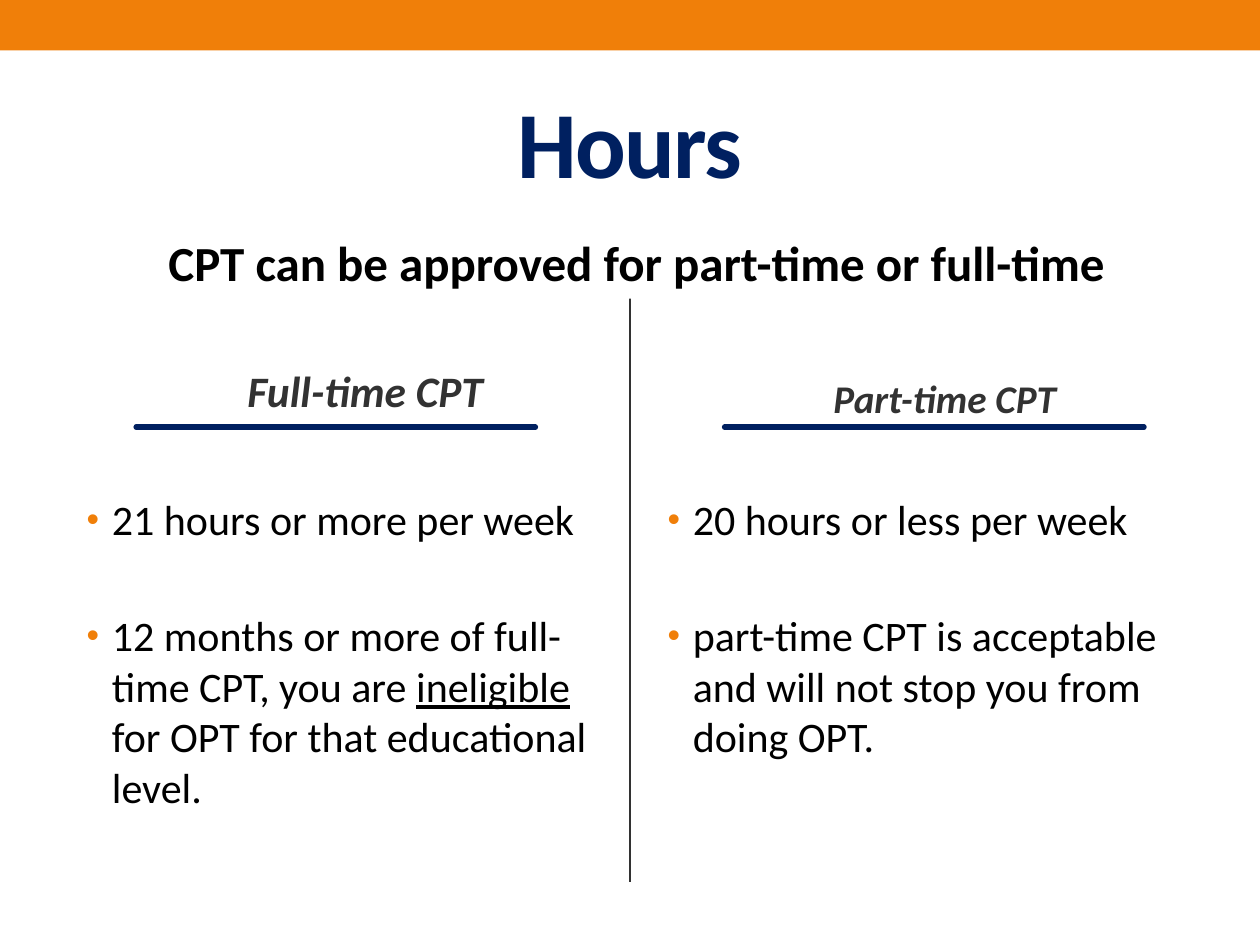
from dataclasses import dataclass

from pptx import Presentation
from pptx.dml.color import RGBColor
from pptx.enum.shapes import MSO_CONNECTOR, MSO_SHAPE
from pptx.enum.text import MSO_ANCHOR, PP_ALIGN
from pptx.oxml import parse_xml
from pptx.oxml.ns import nsdecls
from pptx.util import Inches, Pt

ORANGE = "F07F09"
NAVY = "002060"
GRAY = "323232"
BLACK = "000000"
WHITE = "FFFFFF"
FONT = "Calibri"
RULE_Y = 3.39


@dataclass(frozen=True)
class Frame:
    left: float
    top: float
    width: float
    height: float

    def lengths(self) -> list:
        return [Inches(n) for n in (self.left, self.top, self.width, self.height)]


@dataclass(frozen=True)
class Span:
    text: str
    underline: bool = False


@dataclass(frozen=True)
class Column:
    heading: str
    heading_size: float
    heading_frame: Frame
    rule_start: float
    rule_end: float
    body_frame: Frame
    bullets: tuple


COLUMNS = (
    Column(
        "Full-time CPT", 24.8, Frame(0.75, 2.69, 4.3, 0.7), 1.08, 4.25,
        Frame(0.59, RULE_Y, 4.3, 3.71),
        (
            (Span("21 hours or more per week"),),
            (
                Span("12 months or more of full-time CPT, you are "),
                Span("ineligible", True),
                Span(" for OPT for that educational level."),
            ),
        ),
    ),
    Column(
        "Part-time CPT", 22.4, Frame(5.35, 2.75, 4.3, 0.7), 5.75, 9.08,
        Frame(5.2, RULE_Y, 4.3, 3.53),
        (
            (Span("20 hours or less per week"),),
            (Span("part-time CPT is acceptable and will not stop you from doing OPT."),),
        ),
    ),
)


def color(value: str) -> RGBColor:
    return RGBColor.from_string(value)


def set_values(target, values: dict) -> None:
    for name, value in values.items():
        setattr(target, name, value)


def add_span(para, text: str, size: float, tone: str, **formats):
    span = para.add_run()
    span.text = text
    set_values(span.font, {"name": FONT, "size": Pt(size), **formats})
    span.font.color.rgb = color(tone)
    return span


def add_rectangle(page, frame: Frame, fill: str):
    box = page.shapes.add_shape(MSO_SHAPE.RECTANGLE, *frame.lengths())
    box.shadow.inherit = False
    box.fill.solid()
    box.fill.fore_color.rgb = color(fill)
    box.line.fill.background()
    return box


def add_text_box(page, frame: Frame, **formats):
    box = page.shapes.add_textbox(*frame.lengths())
    set_values(box.text_frame, {"word_wrap": True, **formats})
    return box.text_frame


def add_line(page, start: tuple, end: tuple, tone: str, width: float, cap: str = "flat") -> None:
    points = [Inches(n) for n in (*start, *end)]
    line = page.shapes.add_connector(MSO_CONNECTOR.STRAIGHT, *points)
    line.line.color.rgb = color(tone)
    line.line.width = Pt(width)
    line.line._get_or_add_ln().set("cap", cap)
    line._element.spPr.append(parse_xml(f"<a:effectLst {nsdecls('a')}/>"))


def add_bullet(para) -> None:
    properties = para._p.get_or_add_pPr()
    properties.set("marL", str(Inches(0.2)))
    properties.set("indent", str(Inches(-0.2)))
    for markup in (
        f'<a:buClr {nsdecls("a")}><a:srgbClr val="{ORANGE}"/></a:buClr>',
        f'<a:buSzPct {nsdecls("a")} val="85000"/>',
        f'<a:buFont {nsdecls("a")} typeface="Arial"/>',
        f'<a:buChar {nsdecls("a")} char="•"/>',
    ):
        properties.append(parse_xml(markup))


def add_column(page, column: Column) -> None:
    add_line(page, (column.rule_start, RULE_Y), (column.rule_end, RULE_Y), NAVY, 3, "rnd")
    heading = add_text_box(
        page, column.heading_frame,
        vertical_anchor=MSO_ANCHOR.MIDDLE, margin_top=Inches(0.16),
    )
    para = heading.paragraphs[0]
    para.alignment = PP_ALIGN.CENTER
    add_span(para, column.heading, column.heading_size, GRAY, bold=True, italic=True)

    body = add_text_box(page, column.body_frame, margin_top=Inches(0.53))
    for index, spans in enumerate(column.bullets):
        para = body.add_paragraph() if index else body.paragraphs[0]
        if index:
            para.space_before = Pt(37.5)
        add_bullet(para)
        for span in spans:
            add_span(para, span.text, 24, BLACK, underline=span.underline)


def main() -> None:
    deck = Presentation()
    set_values(deck, {"slide_width": Inches(10), "slide_height": Inches(7.5)})
    page = deck.slides.add_slide(deck.slide_layouts[6])

    add_rectangle(page, Frame(0, 0, 10, 0.4), ORANGE)
    add_line(page, (5, 1.85), (5, 7), GRAY, 1.5)
    for column in COLUMNS:
        add_column(page, column)

    summary = add_rectangle(page, Frame(0.59, 1.8, 8.92, 0.57), WHITE).text_frame
    set_values(summary, {"word_wrap": True, "vertical_anchor": MSO_ANCHOR.TOP})
    para = summary.paragraphs[0]
    para.alignment = PP_ALIGN.CENTER
    add_span(para, "CPT can be approved for part-time or full-time", 28, BLACK, bold=True)

    title = add_text_box(page, Frame(0.5, 0.58, 9, 1.08), vertical_anchor=MSO_ANCHOR.MIDDLE)
    para = title.paragraphs[0]
    para.alignment = PP_ALIGN.CENTER
    span = add_span(para, "Hours", 54, NAVY, bold=True)
    span.font._element.set("spc", "-100")

    deck.save("out.pptx")


if __name__ == "__main__":
    main()
